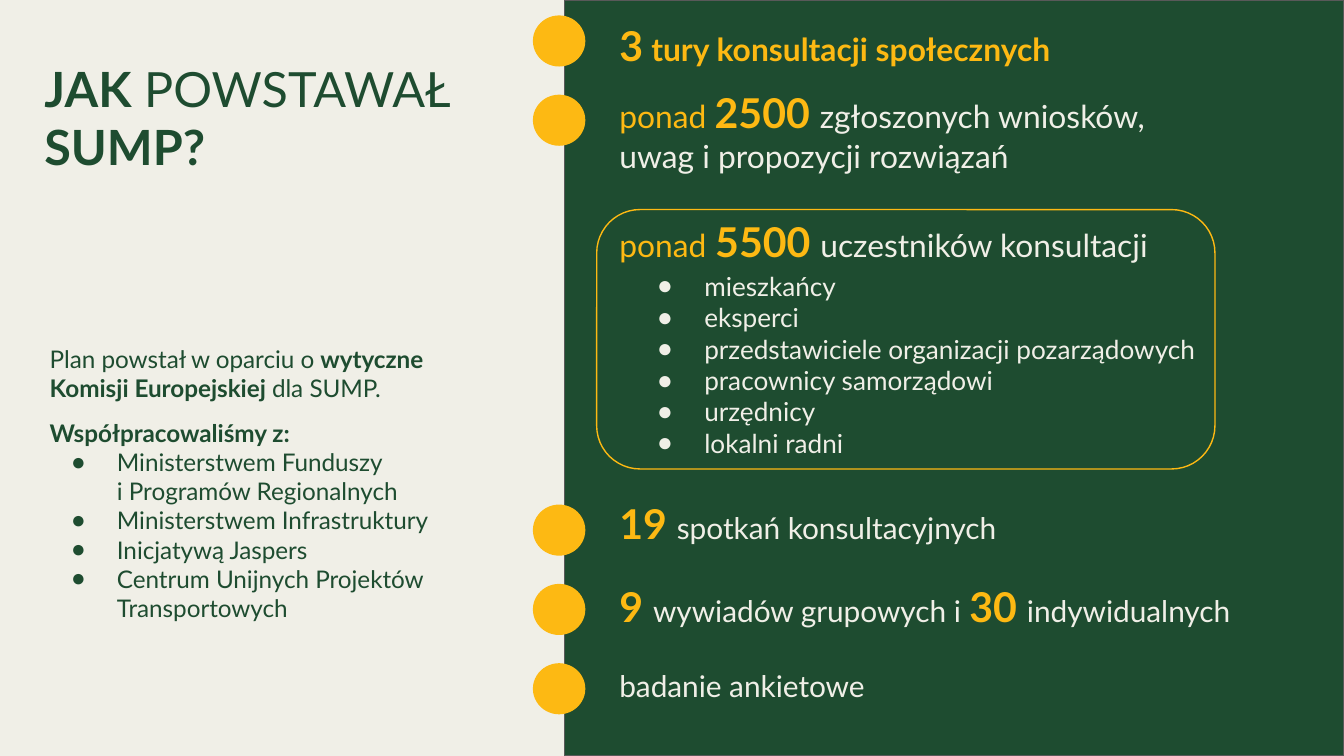
from lxml.etree import SubElement
from pptx import Presentation
from pptx.dml.color import RGBColor
from pptx.enum.shapes import MSO_SHAPE
from pptx.enum.text import MSO_ANCHOR, MSO_AUTO_SIZE, PP_ALIGN
from pptx.oxml.ns import qn
from pptx.util import Inches, Pt

SLIDE_WIDTH = 10
SLIDE_HEIGHT = SLIDE_WIDTH * 9 / 16
GREEN = RGBColor(0x1E, 0x4C, 0x30)
YELLOW = RGBColor(0xFD, 0xB9, 0x13)
CREAM = RGBColor(0xF0, 0xEF, 0xE7)
GREY = RGBColor(0x59, 0x59, 0x59)
FONT = "Lato"
LINE_WIDTH = Pt(0.75)


def place(shape, left, top, width, height):
    shape.left, shape.top = Inches(left), Inches(top)
    shape.width, shape.height = Inches(width), Inches(height)


def prepare_frame(frame, vertical_inset):
    frame.word_wrap = True
    frame.auto_size = MSO_AUTO_SIZE.NONE
    frame.vertical_anchor = MSO_ANCHOR.TOP
    frame.margin_left = frame.margin_right = Inches(0.1)
    frame.margin_top = frame.margin_bottom = Inches(vertical_inset)


def set_indent(paragraph, margin, hanging, bullet_color=None):
    """Indent a paragraph, with a round bullet if a bullet colour is given."""
    properties = paragraph._p.get_or_add_pPr()
    properties.set("marL", str(Inches(margin)))
    properties.set("indent", str(-Inches(hanging)))
    if bullet_color is None:
        SubElement(properties, qn("a:buNone"))
        return
    color = SubElement(properties, qn("a:buClr"))
    SubElement(color, qn("a:srgbClr")).set("val", str(bullet_color))
    SubElement(properties, qn("a:buChar")).set("char", "●")


def write_paragraphs(frame, paragraphs, size, color, hanging=0.35):
    """Write (spans, margin, bulleted, space before) rows; a span is (text, bold)."""
    for index, (spans, margin, bulleted, space) in enumerate(paragraphs):
        paragraph = frame.add_paragraph() if index else frame.paragraphs[0]
        set_indent(paragraph, margin, hanging if bulleted else 0,
                   color if bulleted else None)
        paragraph.alignment = PP_ALIGN.LEFT
        paragraph.space_before = Pt(space)
        paragraph.font.name = FONT
        paragraph.font.size = Pt(size)
        paragraph.font.color.rgb = color
        for text, bold in spans:
            run = paragraph.add_run()
            run.text = text
            run.font.bold = bold


def add_outlined(slide, kind, box, fill, line):
    shape = slide.shapes.add_shape(kind, *map(Inches, box))
    shape.shadow.inherit = False
    if fill is None:
        shape.fill.background()
    else:
        shape.fill.solid()
        shape.fill.fore_color.rgb = fill
    shape.line.color.rgb = line
    shape.line.width = LINE_WIDTH
    return shape


def add_fact(slide, left, top, width, height, spans):
    """Add one line of figures and words; a span is (text, size, colour, bold)."""
    frame = slide.shapes.add_textbox(*map(Inches, (left, top, width, height))).text_frame
    prepare_frame(frame, 0.05)
    paragraph = frame.paragraphs[0]
    paragraph.font.name = FONT
    for text, size, color, bold in spans:
        run = paragraph.add_run()
        run.text = text
        run.font.size = Pt(size)
        run.font.color.rgb = color
        run.font.bold = bold


def figure(text):
    return (text, 22, YELLOW, True)


def words(text, size=16, color=CREAM, bold=False):
    return (text, size, color, bold)


def build_introduction(slide, title, partners, left, top):
    place(title, left, top, 4.35, 1.07)
    prepare_frame(title.text_frame, 0.1)
    write_paragraphs(title.text_frame, [
        ([("JAK", True), (" POWSTAWAŁ", False)], 0, False, 0),
        ([("SUMP?", True)], 0, False, 0),
    ], 26, GREEN)

    place(partners, left + 0.04, top + 2.12, 3.13, 2.2)
    prepare_frame(partners.text_frame, 0.1)
    write_paragraphs(partners.text_frame, [
        ([("Plan powstał w oparciu o ", False), ("wytyczne", True)], 0, False, 0),
        ([("Komisji Europejskiej", True), (" dla SUMP.", False)], 0, False, 0),
        ([("Współpracowaliśmy z:", True)], 0, False, 8.5),
        ([("Ministerstwem Funduszy", False)], 0.5, True, 0),
        ([("i Programów Regionalnych", False)], 0.5, False, 0),
        ([("Ministerstwem Infrastruktury", False)], 0.5, True, 0),
        ([("Inicjatywą Jaspers", False)], 0.5, True, 0),
        ([("Centrum Unijnych Projektów Transportowych", False)], 0.5, True, 0),
    ], 13, GREEN, hanging=0.34)


def build_participants(slide, participants, left, top, width, height):
    frame = add_outlined(slide, MSO_SHAPE.ROUNDED_RECTANGLE,
                         (left, top, width, height), None, YELLOW)
    frame.adjustments[0] = 0.167
    add_fact(slide, left + 0.07, top, 4.48, 0.47, [
        words("ponad", 17, YELLOW), words(" ", 18, YELLOW), figure("5500 "),
        words("uczestników konsultacji", 17),
    ])
    place(participants, left + 0.2, top + 0.4, 4.93, 1.52)
    prepare_frame(participants.text_frame, 0.05)
    groups = ["mieszkańcy", "eksperci", "przedstawiciele organizacji pozarządowych",
              "pracownicy samorządowi", "urzędnicy", "lokalni radni"]
    write_paragraphs(participants.text_frame,
                     [([(group, False)], 0.5, True, 0) for group in groups], 14, CREAM)


def build_milestones(slide, left, top):
    # Dot top, text top, text width and text height, then the spans.
    milestones = [
        (0.12, 0.1, 4.48, 0.47, [
            figure("3"), words(" ", 18, YELLOW, True),
            words("tury konsultacji społecznych", 17, YELLOW, True)]),
        (0.71, 0.6, 4.48, 0.76, [
            words("ponad ", 17, YELLOW), figure("2500 "),
            words("zgłoszonych wniosków, uwag i propozycji rozwiązań", 17)]),
        (3.76, 3.66, 4.48, 0.47, [figure("19 "), words("spotkań konsultacyjnych")]),
        (4.35, 4.28, 5.43, 0.47, [
            figure("9 "), words("wywiadów grupowych i"), words(" ", 17),
            figure("30 "), words("indywidualnych")]),
        (4.94, 4.92, 5.43, 0.37, [words("badanie ankietowe")]),
    ]
    for dot_top, text_top, width, height, spans in milestones:
        add_outlined(slide, MSO_SHAPE.OVAL, (left, top + dot_top, 0.38, 0.37),
                     YELLOW, YELLOW)
        add_fact(slide, left + 0.54, top + text_top, width, height, spans)


def build_slide(presentation):
    slide = presentation.slides.add_slide(presentation.slide_layouts[3])
    slide.background.fill.solid()
    slide.background.fill.fore_color.rgb = CREAM
    title, partners, participants = slide.placeholders

    panel = add_outlined(slide, MSO_SHAPE.RECTANGLE,
                         (4.2, 0, SLIDE_WIDTH - 4.2, SLIDE_HEIGHT), GREEN, GREY)
    title.element.addprevious(panel.element)  # keep the panel behind the lists

    build_introduction(slide, title, partners, 0.23, 0.34)
    build_participants(slide, participants, 4.44, 1.56, 4.6, 1.93)
    build_milestones(slide, 3.97, 0)


def main():
    presentation = Presentation()
    presentation.slide_width = Inches(SLIDE_WIDTH)
    presentation.slide_height = Inches(SLIDE_HEIGHT)
    build_slide(presentation)
    presentation.save("out.pptx")


if __name__ == "__main__":
    main()
